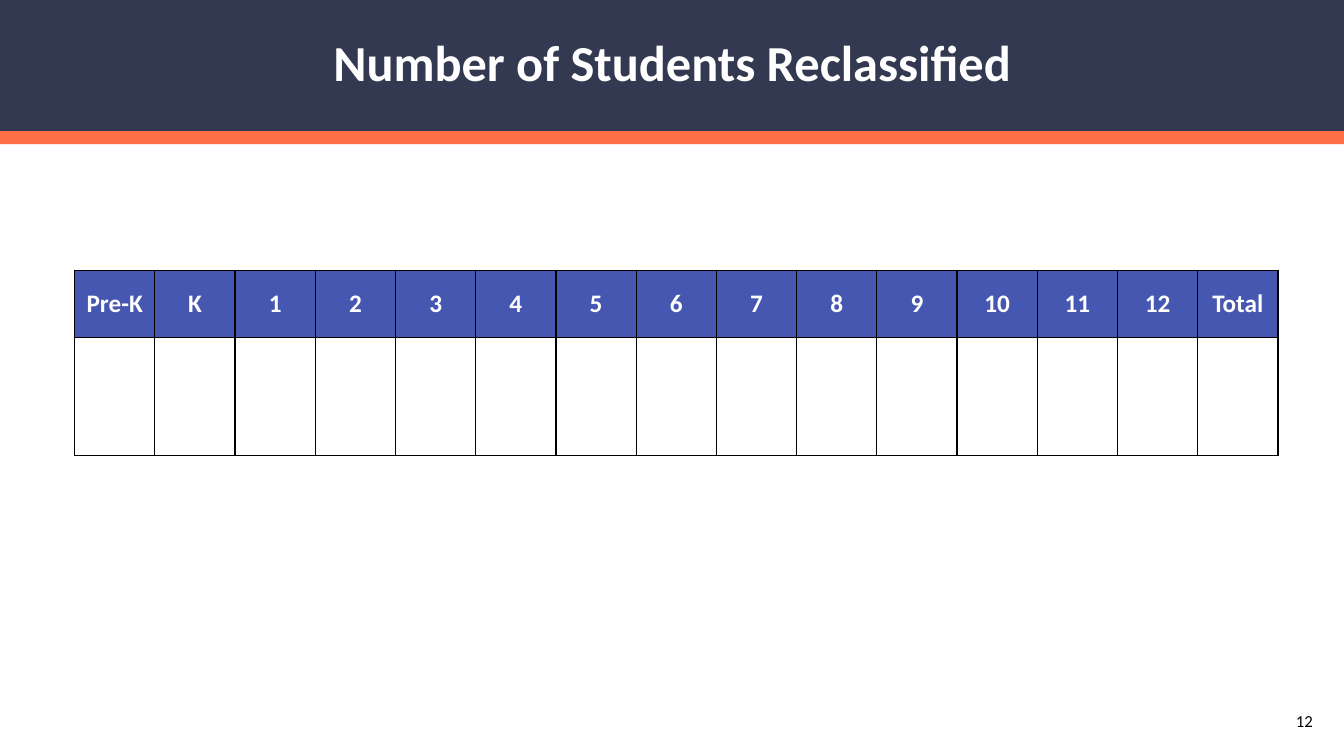
from lxml import etree
from pptx import Presentation
from pptx.dml.color import RGBColor
from pptx.enum.shapes import MSO_SHAPE
from pptx.enum.text import MSO_ANCHOR, PP_ALIGN
from pptx.oxml.ns import qn
from pptx.util import Inches, Pt

RECTANGLE = MSO_SHAPE.RECTANGLE
MIDDLE = MSO_ANCHOR.MIDDLE
CENTER = PP_ALIGN.CENTER
RIGHT = PP_ALIGN.RIGHT

NAVY = RGBColor(0x33, 0x39, 0x51)
ORANGE = RGBColor(0xFF, 0x6E, 0x46)
BLUE = RGBColor(0x46, 0x57, 0xB1)
WHITE = RGBColor(0xFF, 0xFF, 0xFF)
BLACK = RGBColor(0x00, 0x00, 0x00)

GRADES = ["Pre-K", "K", *map(str, range(1, 13)), "Total"]


class SlideBuilder:
    font = "Calibri"
    border_width = Pt(1)

    def __init__(self, slide):
        self.slide = slide

    def band(self, left, top, width, height, color):
        band = self.slide.shapes.add_shape(
            RECTANGLE, Inches(left), Inches(top), Inches(width), Inches(height))
        band.shadow.inherit = False
        band.fill.solid()
        band.fill.fore_color.rgb = color
        band.line.fill.background()

    def fill_text(self, frame, text, size, color, align, bold=False):
        frame.text = text
        paragraph = frame.paragraphs[0]
        paragraph.alignment = align
        for run in paragraph.runs:
            run.font.name = self.font
            run.font.size = Pt(size)
            run.font.bold = bold
            run.font.color.rgb = color
        return paragraph

    def text(self, left, top, width, height, text, size, color, align, bold=False):
        box = self.slide.shapes.add_textbox(
            Inches(left), Inches(top), Inches(width), Inches(height))
        box.text_frame.word_wrap = True
        box.text_frame.vertical_anchor = MIDDLE
        return self.fill_text(box.text_frame, text, size, color, align, bold)

    def borders(self, cell):
        properties = cell._tc.get_or_add_tcPr()
        for side in ("a:lnL", "a:lnR", "a:lnT", "a:lnB"):
            line = etree.SubElement(properties, qn(side), w=str(self.border_width))
            fill = etree.SubElement(line, qn("a:solidFill"))
            etree.SubElement(fill, qn("a:srgbClr"), val=str(BLACK))

    def table(self, left, top, width, row_heights, headings):
        table = self.slide.shapes.add_table(
            len(row_heights), len(headings), Inches(left), Inches(top),
            Inches(width), Inches(sum(row_heights))).table
        table.horz_banding = False
        for column in table.columns:
            column.width = Inches(width / len(headings))
        for row, height in zip(table.rows, row_heights):
            row.height = Inches(height)
        for cell in table.iter_cells():
            self.borders(cell)
            cell.fill.solid()
            cell.fill.fore_color.rgb = WHITE
        for cell, heading in zip(table.rows[0].cells, headings):
            cell.fill.fore_color.rgb = BLUE
            cell.vertical_anchor = MIDDLE
            self.fill_text(cell.text_frame, heading, 18, WHITE, CENTER, bold=True)


def main():
    presentation = Presentation()
    presentation.slide_width = Inches(13.33)
    presentation.slide_height = Inches(7.5)
    builder = SlideBuilder(
        presentation.slides.add_slide(presentation.slide_layouts[6]))

    builder.band(0, 0.88, 13.33, 0.55, ORANGE)
    builder.band(0, 0, 13.33, 1.3, NAVY)
    title = builder.text(0.92, 0, 11.5, 1.3, "Number of Students Reclassified",
                         36, WHITE, CENTER, bold=True)
    title.line_spacing = 0.9
    builder.table(0.74, 2.68, 11.94, [0.67, 1.17], GRADES)
    builder.text(10.12, 6.95, 3, 0.4, "12", 12, BLACK, RIGHT)

    presentation.save("out.pptx")


if __name__ == "__main__":
    main()
